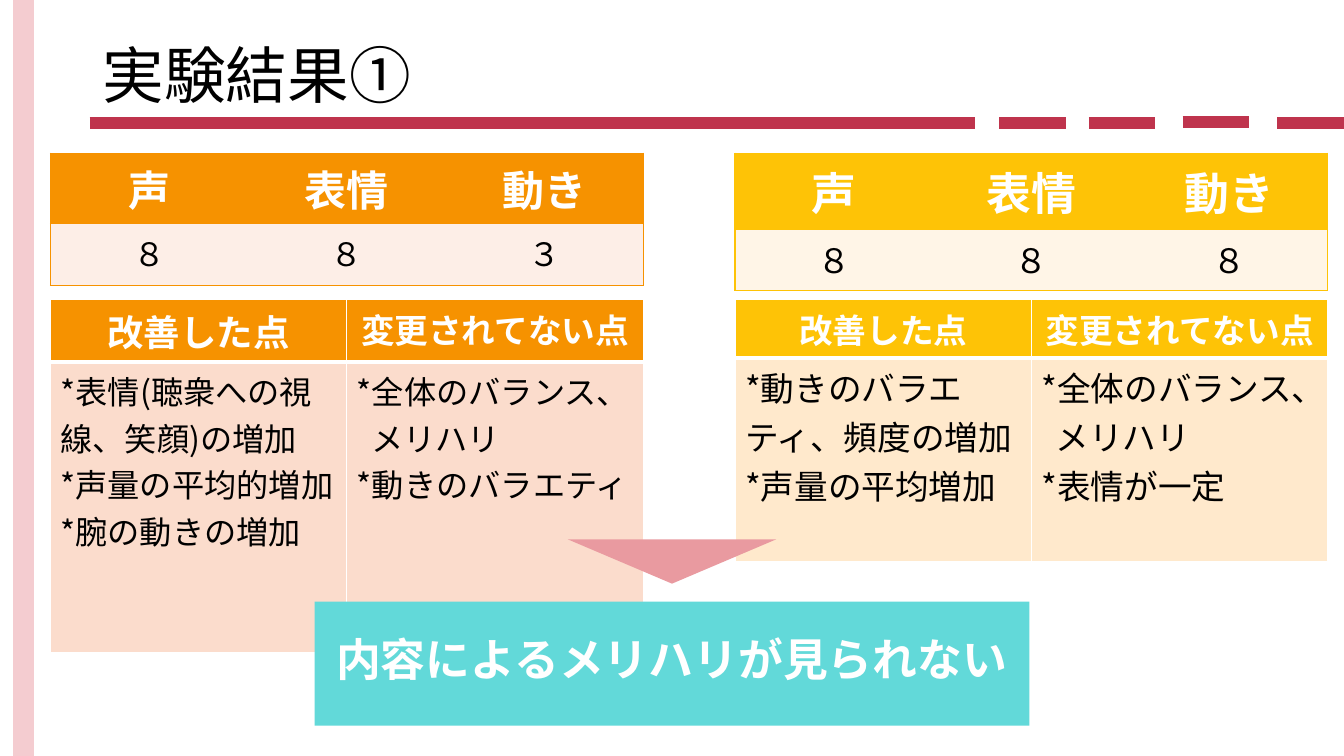
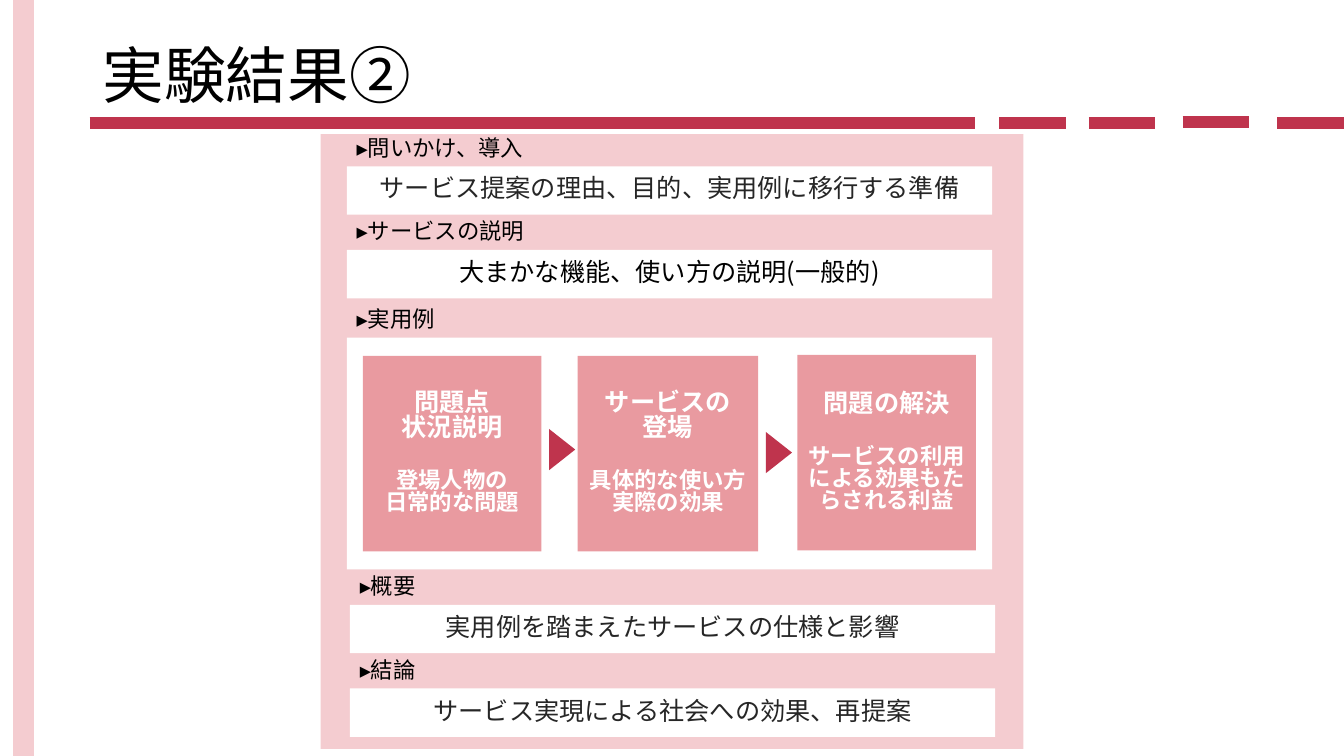
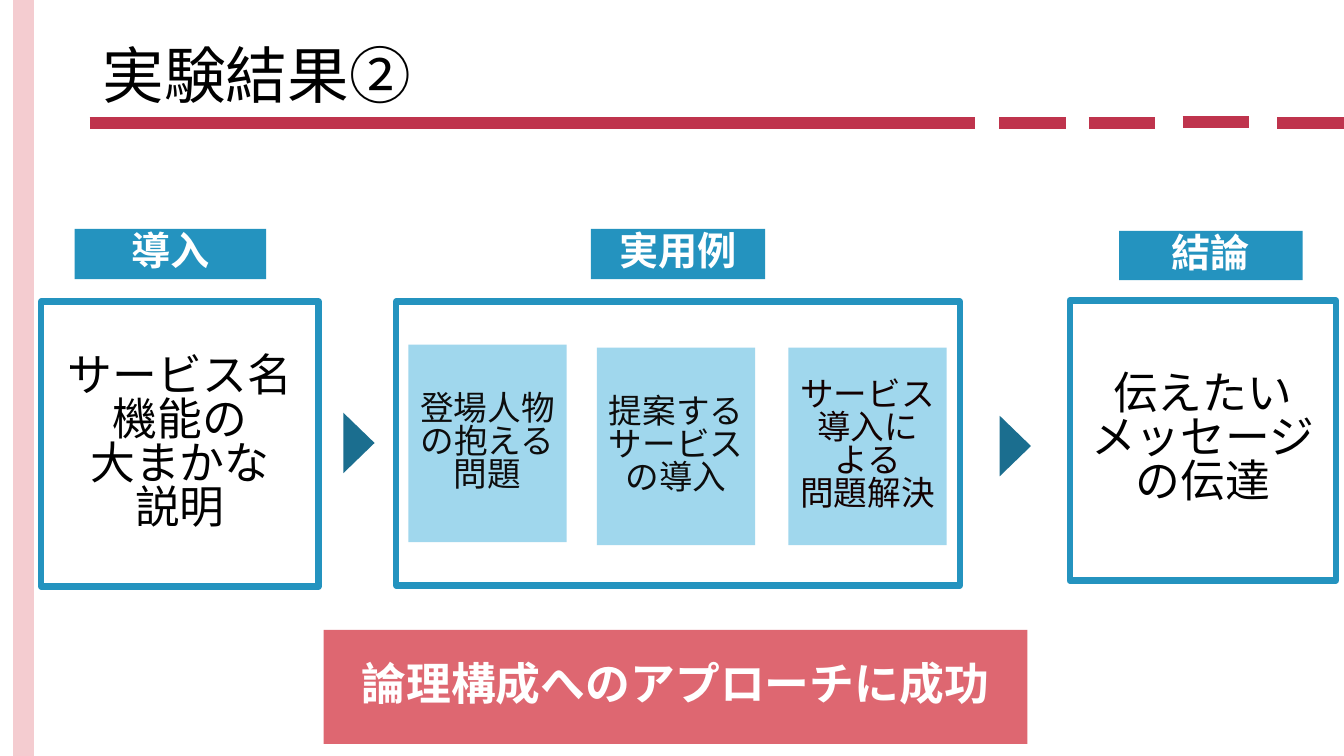
from lxml import etree
from pptx import Presentation
from pptx.dml.color import RGBColor
from pptx.enum.shapes import MSO_CONNECTOR, MSO_SHAPE
from pptx.enum.text import MSO_ANCHOR, PP_ALIGN
from pptx.oxml.ns import qn
from pptx.util import Emu, Pt

RECTANGLE = MSO_SHAPE.RECTANGLE
TRIANGLE = MSO_SHAPE.ISOSCELES_TRIANGLE
STRAIGHT = MSO_CONNECTOR.STRAIGHT
MIDDLE = MSO_ANCHOR.MIDDLE
LEFT, CENTER = PP_ALIGN.LEFT, PP_ALIGN.CENTER

FONT = "Noto Sans CJK JP"
SHAPE_LEADING = 0.82
WIDTH, HEIGHT = 1333, 750

BLACK, WHITE, CHARCOAL = "000000", "FFFFFF", "262626"
CRIMSON, ROSE, PALE_PINK, CORAL = "BF344D", "E99AA0", "F4CCD0", "DE6771"
ORANGE, YELLOW, TURQUOISE = "F69200", "FEC306", "62D9D9"
BLUE, LIGHT_BLUE, DARK_BLUE = "2493BF", "A0D7ED", "1B6E8F"


def px(length):
    """Turn px, 100 to the inch, into EMU."""
    return Emu(length * 9144)


def rgb(color):
    return RGBColor.from_string(color)


def style(paragraph, size, color, bold=False, align=CENTER, leading=None):
    paragraph.alignment = align
    paragraph.line_spacing = leading
    for run in paragraph.runs:
        run.font.size = Pt(size)
        run.font.bold = bold
        run.font.color.rgb = rgb(color)
        run.font.name = FONT
        east_asian = etree.SubElement(run.font._element, qn("a:ea"))
        east_asian.set("typeface", FONT)


def write(frame, text, size, color, **options):
    frame.text = text
    for paragraph in frame.paragraphs:
        style(paragraph, size, color, **options)


def add_line(slide, x1, y1, x2, y2, color, weight):
    line = slide.shapes.add_connector(STRAIGHT, px(x1), px(y1), px(x2), px(y2))
    line.line.color.rgb = rgb(color)
    line.line.width = Pt(weight)
    etree.SubElement(line._element.spPr, qn("a:effectLst"))


def add_box(slide, area, fill, kind=RECTANGLE, outline=None):
    box = slide.shapes.add_shape(kind, *map(px, area))
    box.shadow.inherit = False
    box.fill.solid()
    box.fill.fore_color.rgb = rgb(fill)
    if outline:
        box.line.color.rgb = rgb(outline)
        box.line.width = Pt(4.5)
    else:
        box.line.fill.background()
    return box


def add_text_box(slide, area, fill, text, size, color=WHITE, bold=False, outline=None):
    box = add_box(slide, area, fill, outline=outline)
    box.text_frame.vertical_anchor = MIDDLE
    write(box.text_frame, text, size, color, bold=bold, leading=SHAPE_LEADING)
    return box


def add_arrow(slide, area, fill, rotation=90):
    """Add a triangle; area is its place before it is turned."""
    add_box(slide, area, fill, TRIANGLE).rotation = rotation


def add_label(slide, area, text, size):
    frame = slide.shapes.add_textbox(*map(px, area)).text_frame
    frame.word_wrap = True
    frame.vertical_anchor = MIDDLE
    write(frame, text, size, BLACK, align=LEFT, leading=SHAPE_LEADING)


def add_titled_slide(deck, title):
    """Add a slide with the side band, the broken rule and the title."""
    slide = deck.slides.add_slide(deck.slide_layouts[6])
    add_line(slide, 23, 0, 23, HEIGHT, PALE_PINK, 15)
    add_line(slide, 89, 122, 967, 122, CRIMSON, 8)
    for left, y in ((991, 122), (1080, 122), (1173, 121), (1267, 122)):
        add_line(slide, left, y, left + 66, y, CRIMSON, 8)
    add_label(slide, (92, 7, 1150, 145), title, 44)
    return slide


def set_borders(cell, borders):
    """Set (color, points) per side, given in the order L, R, T, B; None hides it."""
    properties = cell._tc.get_or_add_tcPr()
    for side, border in zip("LRTB", borders):
        line = etree.SubElement(properties, qn(f"a:ln{side}"))
        if border is None:
            etree.SubElement(line, qn("a:noFill"))
            continue
        color, points = border
        line.set("w", str(Pt(points)))
        solid = etree.SubElement(line, qn("a:solidFill"))
        etree.SubElement(solid, qn("a:srgbClr")).set("val", color)


def add_grid(slide, left, top, rows, heights):
    """Add a 588 px wide table with equal columns."""
    columns = len(rows[0])
    frame = slide.shapes.add_table(
        len(rows), columns, px(left), px(top), px(588), px(sum(heights)))
    table = frame.table
    table.first_row = table.horz_banding = False
    for column in table.columns:
        column.width = px(588 // columns)
    for row, height in zip(table.rows, heights):
        row.height = px(height)
    return table


def fill_cell(cell, fill, borders, text, size, color, **options):
    set_borders(cell, borders)
    cell.fill.solid()
    cell.fill.fore_color.rgb = rgb(fill)
    write(cell.text_frame, text, size, color, **options)


def add_score_table(slide, left, scores, accent, tint, sizes, heights):
    rows = (("声", "表情", "動き"), scores)
    table = add_grid(slide, left, 152, rows, heights)
    edge = (accent, 1)
    for r, row in enumerate(rows):
        for c, text in enumerate(row):
            borders = (edge if c == 0 else None, edge if c == 2 else None, edge, edge)
            fill, color = ((accent, WHITE), (tint, BLACK))[r]
            fill_cell(table.cell(r, c), fill, borders, text, sizes[r], color, bold=r == 0)


def add_change_table(slide, left, findings, accent, tint, header_sizes, size, heights):
    headers = ("改善した点", "変更されてない点")
    table = add_grid(slide, left, 297, (headers, findings), heights)
    thin, thick = (WHITE, 1), (WHITE, 3)
    for c, (header, finding) in enumerate(zip(headers, findings)):
        fill_cell(table.cell(0, c), accent, (thin, thin, thin, thick),
                  header, header_sizes[c], WHITE, bold=True)
        body = table.cell(1, c)
        fill_cell(body, tint, (thin, thin, thick, thin), finding, size, BLACK, align=LEFT)
        for paragraph in body.text_frame.paragraphs:
            if not paragraph.text.startswith("*"):
                paragraph._p.get_or_add_pPr().set("marL", str(px(14)))


def build_scores(deck):
    slide = add_titled_slide(deck, "実験結果①")
    add_score_table(slide, 729, "８８８", YELLOW, "FFF5E7", (32, 24), (76, 60))
    add_change_table(
        slide, 729,
        ("*動きのバラエティ、頻度の増加\n*声量の平均増加",
         "*全体のバランス、\nメリハリ\n*表情が一定"),
        YELLOW, "FFE9CC", (24, 24), 24, (58, 202))
    add_score_table(slide, 50, "８８３", ORANGE, "FDEEE7", (30, 23), (70, 61))
    add_change_table(
        slide, 50,
        ("*表情(聴衆への視線、笑顔)の増加\n*声量の平均的増加\n*腕の動きの増加",
         "*全体のバランス、\nメリハリ\n*動きのバラエティ"),
        ORANGE, "FBDCCC", (26, 24), 23, (62, 288))
    add_text_box(slide, (312, 597, 709, 123), TURQUOISE,
                 "内容によるメリハリが見られない", 32, bold=True)
    add_arrow(slide, (563, 535, 207, 44), ROSE, 180)


def add_scene(slide, area, heading, detail):
    """Add a card whose smaller detail stands one line below its heading."""
    card = add_text_box(slide, area, ROSE, f"{heading}\n{detail}", 18, bold=True)
    details = card.text_frame.paragraphs[len(heading.split("\n")):]
    details[0].space_before = Pt(21)
    for paragraph in details:
        for run in paragraph.runs:
            run.font.size = Pt(16)


def build_structure(deck):
    slide = add_titled_slide(deck, "実験結果②")
    add_box(slide, (318, 133, 697, 610), PALE_PINK)
    sections = (
        (344, 165, 48, "問いかけ、導入",
         "サービス提案の理由、目的、実用例に移行する準備", CHARCOAL),
        (344, 248, 48, "サービスの説明", "大まかな機能、使い方の説明(一般的)", BLACK),
        (344, 335, 230, "実用例", "", BLACK),
        (347, 600, 48, "概要", "実用例を踏まえたサービスの仕様と影響", CHARCOAL),
        (347, 683, 48, "結論", "サービス実現による社会への効果、再提案", CHARCOAL),
    )
    for left, top, height, heading, summary, color in sections:
        add_text_box(slide, (left, top, 640, height), WHITE, summary, 18, color)
        add_label(slide, (left, top - 35, 440, 37), f"▸{heading}", 16)

    add_scene(slide, (360, 353, 177, 194), "問題点\n状況説明", "登場人物の\n日常的な問題")
    add_scene(slide, (573, 353, 179, 194), "サービスの\n登場", "具体的な使い方\n実際の効果")
    add_scene(slide, (791, 352, 177, 194), "問題の解決",
              "サービスの利用による効果もたらされる利益")
    for left, top in ((537, 433), (752, 436)):
        add_arrow(slide, (left, top, 41, 26), CRIMSON)


def build_approach(deck):
    slide = add_titled_slide(deck, "実験結果②")
    stages = (
        ("導入", (74, 227, 190, 50), (41, 299, 275, 283),
         "サービス名\n機能の\n大まかな\n説明"),
        ("実用例", (586, 227, 173, 50), (393, 299, 559, 282), ""),
        ("結論", (1110, 229, 182, 49), (1061, 298, 264, 278),
         "伝えたい\nメッセージの伝達"),
    )
    for name, tag, frame, message in stages:
        add_text_box(slide, tag, BLUE, name, 28, bold=True)
        add_text_box(slide, frame, WHITE, message, 32, BLACK, outline=BLUE)

    steps = (
        (405, 342, "登場人物の抱える問題", "0D0D0D"),
        (592, 345, "提案するサービスの導入", "0D0D0D"),
        (782, 345, "サービス導入に\nよる\n問題解決", "130101"),
    )
    for left, top, step, color in steps:
        add_text_box(slide, (left, top, 157, 196), LIGHT_BLUE, step, 24, color)
    for left, top in ((326, 424), (977, 427)):
        add_arrow(slide, (left, top, 60, 31), DARK_BLUE)
    add_text_box(slide, (321, 625, 698, 113), CORAL,
                 "論理構成へのアプローチに成功", 32, bold=True)


def main():
    deck = Presentation()
    deck.slide_width, deck.slide_height = px(WIDTH), px(HEIGHT)
    build_scores(deck)
    build_structure(deck)
    build_approach(deck)
    deck.save("out.pptx")


if __name__ == "__main__":
    main()
